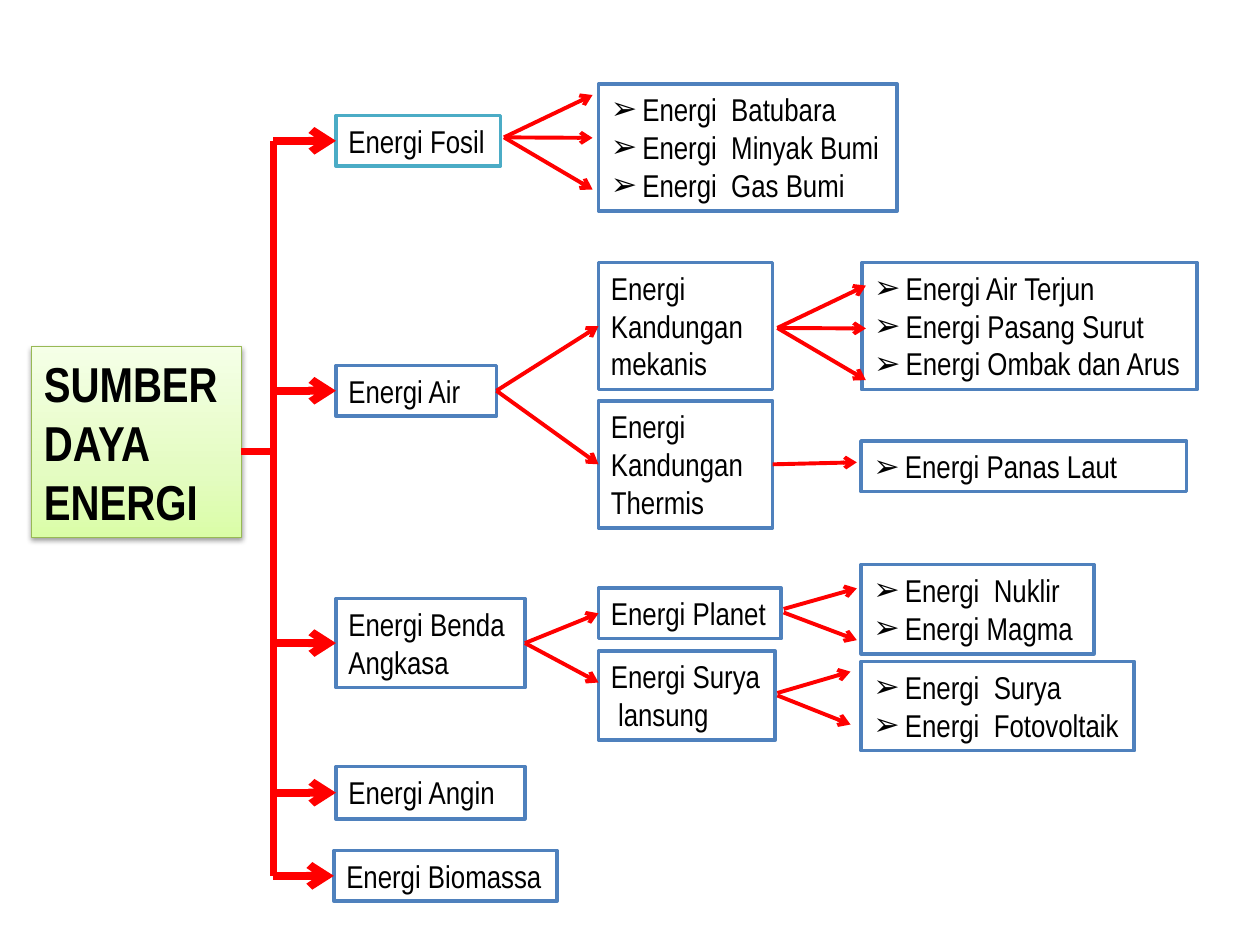
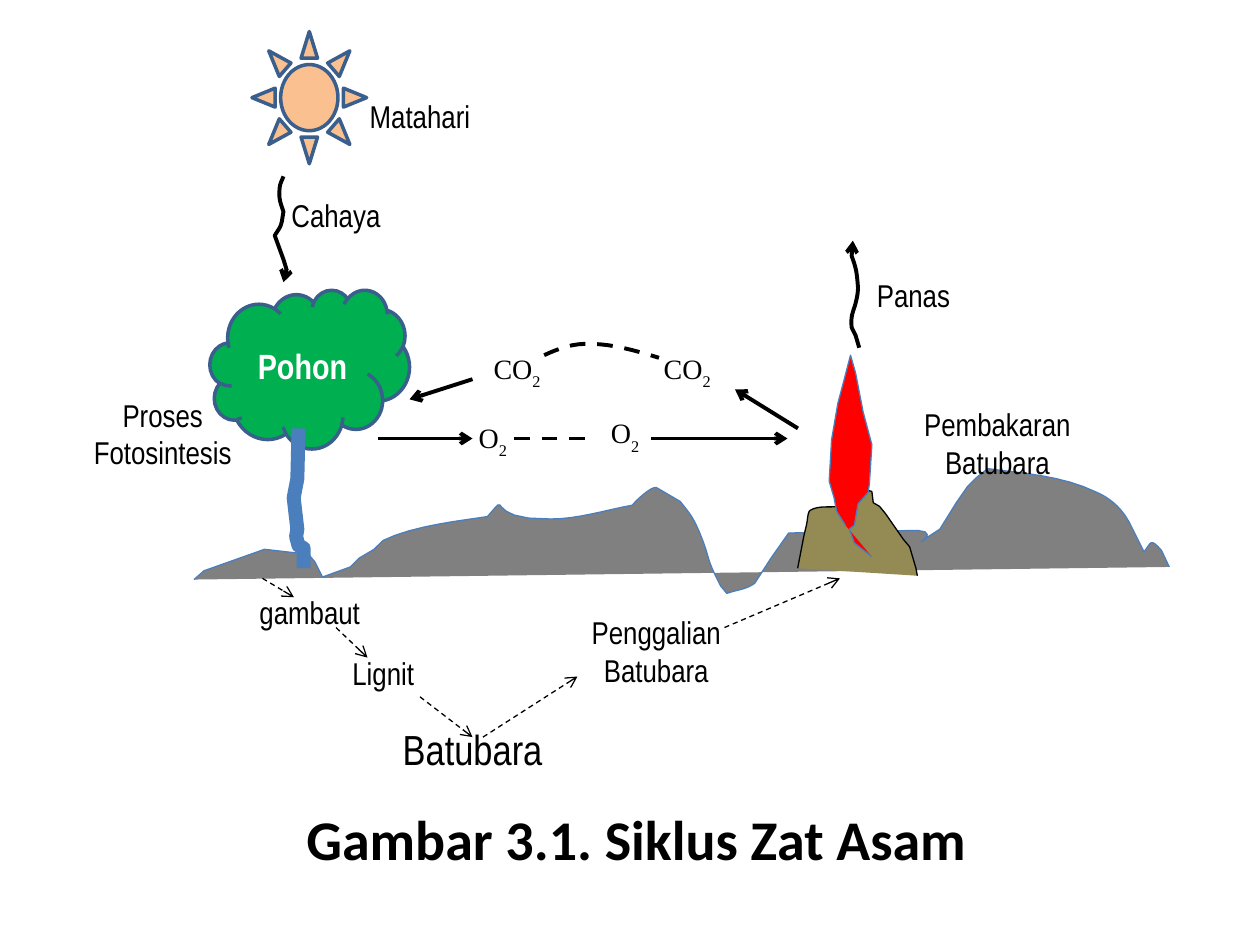
from copy import deepcopy
from lxml.etree import SubElement
from pptx import Presentation
from pptx.dml.color import RGBColor
from pptx.enum.dml import MSO_LINE
from pptx.enum.shapes import MSO_CONNECTOR, MSO_SHAPE
from pptx.enum.text import MSO_ANCHOR, MSO_AUTO_SIZE, PP_ALIGN
from pptx.oxml.ns import qn
from pptx.util import Pt

COLORS = {key: RGBColor.from_string(value) for key, value in {
    "black": "000000", "white": "FFFFFF", "red": "FF0000",
    "blue": "4F81BD", "teal": "4BACC6", "edge": "3A5F8C", "earth_edge": "4B7EBC",
    "root_edge": "98B955", "root_dark": "DAFDA7", "root_mid": "E4FCC2", "root_light": "F5FFE7",
    "sun": "FAC090", "leaf": "00B050", "ground": "808080", "pit": "948A54",
}.items()}
BODY = {"name": "Arial Narrow", "size": Pt(18)}
FORMULA = {"name": "Times New Roman", "size": Pt(16)}
BOX_FRAME = {"word_wrap": False, "auto_size": MSO_AUTO_SIZE.SHAPE_TO_FIT_TEXT,
             "vertical_anchor": MSO_ANCHOR.TOP}
LABEL_FRAME = BOX_FRAME | {"word_wrap": True}
MIDDLE_FRAME = LABEL_FRAME | {"vertical_anchor": MSO_ANCHOR.MIDDLE}
RIGHT, LEFT = 3, 1


def write(shape, lines, frame, font, color="black", align=PP_ALIGN.LEFT, bullet=False):
    """Fill a shape with one paragraph a line; what follows "_" is a subscript."""
    text_frame = shape.text_frame
    for key, value in frame.items():
        setattr(text_frame, key, value)
    for number, line in enumerate(lines):
        paragraph = text_frame.add_paragraph() if number else text_frame.paragraphs[0]
        paragraph.alignment = align
        if bullet:
            properties = paragraph._p.get_or_add_pPr()
            properties.set("marL", str(Pt(18)))
            properties.set("indent", str(-Pt(18)))
            SubElement(properties, qn("a:buFont"), typeface="Arial")
            SubElement(properties, qn("a:buChar"), char="➢")
        for level, part in enumerate(line.split("_")):
            run = paragraph.add_run()
            run.text = part
            for key, value in font.items():
                setattr(run.font, key, value)
            run.font.color.rgb = COLORS[color]
            if level:
                run.font._element.set("baseline", "-30000")


def stroke(shape, color, width, dash=False, arrow=False):
    """Set the outline and return the effect list, which is empty: no shadow."""
    shape.line.color.rgb = COLORS[color]
    shape.line.width = Pt(width)
    if dash:
        shape.line.dash_style = MSO_LINE.DASH
    properties = shape._element.spPr
    if arrow:
        SubElement(properties.find(qn("a:ln")), qn("a:tailEnd"), type="arrow")
    return SubElement(properties, qn("a:effectLst"))


prs = Presentation()
prs.slide_width, prs.slide_height = Pt(720), Pt(540)
blank = prs.slide_layouts[6]

# Slide 1: tree of energy sources
tree = prs.slides.add_slide(blank)

root = tree.shapes.add_shape(MSO_SHAPE.RECTANGLE, Pt(18), Pt(198), Pt(120), Pt(109))
root.fill.gradient()
root.fill.gradient_angle = 90
stops = root._element.spPr.find(qn("a:gradFill")).find(qn("a:gsLst"))
stops.insert(1, deepcopy(stops[0]))
for stop, (position, tint) in zip(root.fill.gradient_stops, (
        (0, "root_dark"), (0.35, "root_mid"), (1, "root_light"))):
    stop.position = position
    stop.color.rgb = COLORS[tint]
shadow = SubElement(stroke(root, "root_edge", 0.75), qn("a:outerShdw"), blurRad=str(Pt(3.1)),
                    dist=str(Pt(1.6)), dir="5400000", rotWithShape="0")
shade = SubElement(shadow, qn("a:srgbClr"), val="000000")
SubElement(shade, qn("a:alpha"), val="38000")
write(root, ["SUMBER", "DAYA", "ENERGI"], MIDDLE_FRAME,
      BODY | {"size": Pt(28), "bold": True})

# key: left, top, width, height, lines, bulleted
sources = {
    "fosil": (192, 66, 94, 29, ["Energi Fosil"], False),
    "air": (192, 208.8, 91.7, 29, ["Energi Air"], False),
    "angkasa": (192, 342, 108, 51, ["Energi Benda", "Angkasa"], False),
    "angin": (192, 438, 108, 30, ["Energi Angin"], False),
    "biomassa": (190.8, 486, 127.5, 29, ["Energi Biomassa"], False),
    "planet": (342, 336, 104.4, 29, ["Energi Planet"], False),
    "surya": (342, 372, 101, 51, ["Energi Surya", " lansung"], False),
    "mekanis": (342, 150, 99.5, 72.7, ["Energi", "Kandungan", "mekanis"], False),
    "thermis": (342, 229, 99.5, 72.7, ["Energi", "Kandungan", "Thermis"], False),
    "fosil_list": (342, 48, 170.6, 72.7,
                   ["Energi  Batubara", "Energi  Minyak Bumi", "Energi  Gas Bumi"], True),
    "mekanis_list": (492.5, 150, 191.5, 72.7,
                     ["Energi Air Terjun", "Energi Pasang Surut", "Energi Ombak dan Arus"], True),
    "thermis_list": (492, 252, 186, 29, ["Energi Panas Laut"], True),
    "planet_list": (492, 322.6, 133.2, 51, ["Energi  Nuklir", "Energi Magma"], True),
    "surya_list": (492, 378, 156.2, 51, ["Energi  Surya", "Energi  Fotovoltaik"], True),
}
boxes = {}
for key, (left, top, width, height, lines, bulleted) in sources.items():
    box = tree.shapes.add_shape(MSO_SHAPE.RECTANGLE, Pt(left), Pt(top), Pt(width), Pt(height))
    box.fill.solid()
    box.fill.fore_color.rgb = COLORS["white"]
    stroke(box, "teal" if key == "fosil" else "blue", 2)
    wraps = key in ("angkasa", "angin", "thermis_list")
    write(box, lines, LABEL_FRAME if wraps else BOX_FRAME, BODY, bullet=bulleted)
    boxes[key] = box

# x1, y1, x2, y2, box it leaves, box it reaches, width, arrowhead
spine = 156.3
main = ("fosil", "air", "angkasa", "angin", "biomassa")
middles = {key: sources[key][1] + sources[key][3] / 2 for key in main}
links = [(138, 258, spine, 258, None, None, 4.5, False),
         (spine, middles["fosil"], spine, middles["biomassa"], None, None, 4.5, False)]
links += [(spine, middles[key], 192, middles[key], None, key, 4.5, True) for key in main]
branches = [
    (283.7, 223, 342, 186, "air", "mekanis"),
    (283.7, 223, 342, 265, "air", "thermis"),
    (300, 366, 342, 348, "angkasa", "planet"),
    (300, 367, 342, 390, "angkasa", None),
    (441.5, 265, 489.6, 264.2, "thermis", None),
    (447.8, 348, 489.6, 336.2, None, None), (447.8, 350, 489.6, 365.8, None, None),
    (444.2, 396, 486, 383.8, None, None), (444.2, 397.4, 486, 414, None, None),
]
for x, y in ((288, 78.5), (444.2, 187.4)):
    branches += [(x, y, x + 50.6, y + rise, None, None) for rise in (-24.2, 0.3, 29.8)]
links += [branch + (2.25, True) for branch in branches]
for x1, y1, x2, y2, parent, child, width, arrow in links:
    link = tree.shapes.add_connector(MSO_CONNECTOR.STRAIGHT, Pt(x1), Pt(y1), Pt(x2), Pt(y2))
    if parent:
        link.begin_connect(boxes[parent], RIGHT)
    if child:
        link.end_connect(boxes[child], LEFT)
    stroke(link, "red", width, arrow=arrow)

# Slide 2: the oxygen cycle
cycle = prs.slides.add_slide(blank)

for preset, bounds, color in ((MSO_SHAPE.SUN, (144, 18, 65.5, 75.6), "sun"),
                              (MSO_SHAPE.CLOUD, (120, 165.6, 114, 90.7), "leaf")):
    figure = cycle.shapes.add_shape(preset, *map(Pt, bounds))
    figure.fill.solid()
    figure.fill.fore_color.rgb = COLORS[color]
    stroke(figure, "edge", 2)
crown = figure
write(crown, ["Pohon"], {"word_wrap": True, "vertical_anchor": MSO_ANCHOR.MIDDLE},
      BODY | {"size": Pt(20), "bold": True}, "white", PP_ALIGN.CENTER)

# Each path holds a start, then (x, y) for a line or six values for a Bezier curve
hills = [
    (110.9, 331.2), (116.6, 326.2), (151.2, 313.9), (176.4, 316.8), (180, 321.1),
    (184.3, 329.8), (200.2, 324), (205.2, 319), (213.8, 313.9), (218.9, 308.9),
    (236.2, 300.2, 265, 297.4, 278.6, 295.2), (293, 278.6, 274.3, 297.4, 314.6, 296.6),
    (330.5, 296.6, 345.6, 291.6, 361.4, 288.7), (363.6, 285.8, 372.2, 277.9, 375.1, 278.6),
    (388.8, 286.6), (393.1, 292.3, 395.3, 293.8, 399.6, 303.8),
    (406.8, 321.1, 402.5, 316.8, 411.8, 334.8), (415.4, 339.1),
    (421.2, 337, 426.2, 337, 431.3, 333.4), (440.6, 319), (450.7, 304.6), (524.2, 303.1),
    (541.4, 303.8, 511.9, 318.2, 537.1, 302.4), (546.5, 287.3), (553, 277.9),
    (560.2, 270.7, 556.6, 274.3, 564.5, 267.8), (584.6, 270.7, 606.2, 271.4, 627.1, 281.5),
    (632.2, 283.7, 640.1, 288.7, 645.1, 298.1), (653.8, 315.4),
    (658.1, 309.6, 657.4, 307.4, 663.8, 314.6), (668.2, 324),
]
pit = [
    (455.8, 324.7), (459.4, 306), (460.8, 300.2), (461.5, 297.4, 461.5, 292.3, 463, 291.6),
    (468, 288.7, 473.8, 290.2, 478.8, 289.4), (488.2, 283), (491.8, 279.4), (498.2, 280.8),
    (499, 287.3), (502.6, 289.4), (506.2, 293.8), (516.2, 308.2), (519.8, 312.5),
    (523.4, 324.7), (524.2, 329),
]
flame = [
    (483.1, 300.2), (478.1, 292.3), (476.6, 284.4), (473.8, 275), (475.2, 251.3),
    (478.8, 230.4), (481.7, 219.6), (486, 203), (488.9, 213.1), (493.2, 235.4),
    (498.2, 254.2), (496.8, 276.5), (496.1, 281.5), (490.3, 288), (488.2, 300.2),
    (485.3, 302.4), (488.2, 310.3), (498.2, 318.2),
]
sunlight = [
    (162, 100.8), (161.3, 103, 159.8, 105.1, 159.8, 108),
    (159.1, 113.8, 160.6, 116.6, 162, 121), (161.3, 124.6, 161.3, 127.4, 159.8, 130.3),
    (157, 134.6), (162, 148.3), (164.2, 155.5), (162, 161.3),
]
heat = [
    (491, 198.7), (488.9, 191.5), (486.7, 187.2), (486, 180.7, 487.4, 178.6, 488.9, 173.5),
    (489.6, 170.6, 490.3, 167.8, 490.3, 164.2), (489.6, 154.1, 488.9, 152.6, 486.7, 146.2),
    (487.4, 137.5),
]
trunk = [
    (170.6, 244.8), (169.9, 273.6), (167.8, 284.4), (169.9, 302.4), (169.2, 306.7),
    (170.6, 311.8), (173.5, 313.2), (173.5, 324.7),
]
gas_arc = [
    (311, 203), (319, 199.4, 327.6, 195.8, 338.4, 196.6),
    (349.2, 196.6, 362.9, 200.2, 376.6, 204.5),
]
# path, fill, line colour, line width, dashed, arrowhead
for path, fill, color, width, dash, arrow in (
        (hills, "ground", "earth_edge", 0.75, False, False),
        (pit, "pit", "black", 0.75, False, False),
        (flame, "red", "earth_edge", 0.75, False, False),
        (sunlight, None, "black", 2.25, False, True),
        (heat, None, "black", 2.25, False, True),
        (trunk, None, "earth_edge", 8, False, False),
        (gas_arc, None, "black", 2.25, True, False)):
    points = [path[0]]
    for step in path[1:]:
        if len(step) == 2:
            points.append(step)
            continue
        x0, y0 = points[-1]
        x1, y1, x2, y2, x3, y3 = step
        for t in (n / 8 for n in range(1, 9)):
            a, b, c, d = (1 - t) ** 3, 3 * t * (1 - t) ** 2, 3 * t * t * (1 - t), t ** 3
            points.append((a * x0 + b * x1 + c * x2 + d * x3, a * y0 + b * y1 + c * y2 + d * y3))
    places = [(Pt(x), Pt(y)) for x, y in points]
    builder = cycle.shapes.build_freeform(*places[0])
    builder.add_line_segments(places[1:], close=False)
    outline = builder.convert_to_shape()
    if fill:
        outline.fill.solid()
        outline.fill.fore_color.rgb = COLORS[fill]
    else:
        outline.fill.background()
    stroke(outline, color, width, dash, arrow)

# x1, y1, x2, y2, width, dashed, arrowhead
for x1, y1, x2, y2, width, dash, arrow in (
        (150, 330.5, 168, 341.3, 0.75, True, True),
        (192, 358.6, 210, 375.8, 0.75, True, True),
        (276, 421.2, 330, 386.6, 0.75, True, True),
        (240, 398.2, 270, 421.2, 0.75, True, True),
        (414, 358.6, 480, 330.5, 0.75, True, True),
        (216, 250.6, 270, 250.6, 2.25, False, True),
        (372, 250.6, 450, 250.6, 2.25, False, True),
        (293.8, 250.6, 336, 250.6, 2.25, True, False),
        (456, 244.8, 420, 222.5, 2.25, False, True),
        (270, 216.7, 234, 228.2, 2.25, False, True)):
    flow = cycle.shapes.add_connector(MSO_CONNECTOR.STRAIGHT, Pt(x1), Pt(y1), Pt(x2), Pt(y2))
    stroke(flow, "black", width, dash, arrow)

for left, top, width, height, *lines in (
        (204, 51.8, 72, 27.4, "Matahari"), (156, 108.7, 72, 27.4, "Cahaya"),
        (516, 228.2, 108, 48.2, "Pembakaran Batubara"), (486, 154, 72, 27.4, "Panas"),
        (132, 335.5, 90, 27.4, "gambaut"), (330, 347, 90, 48.2, "Penggalian Batubara"),
        (204, 409.7, 132, 34.6, "Batubara"), (174, 370, 90, 27.4, "Lignit"),
        (42, 222.5, 102, 48.2, "Proses", "Fotosintesis")):
    label = cycle.shapes.add_textbox(Pt(left), Pt(top), Pt(width), Pt(height))
    font = BODY | {"size": Pt(24)} if lines == ["Batubara"] else BODY
    write(label, lines, LABEL_FRAME, font, align=PP_ALIGN.CENTER)

for left, top, formula in ((275, 199.4, "CO_2"), (372.2, 199.4, "CO_2"),
                           (342, 236.2, "O_2"), (266.4, 239, "O_2")):
    gas = cycle.shapes.add_textbox(Pt(left), Pt(top), Pt(48), Pt(25.2))
    write(gas, [formula], MIDDLE_FRAME, FORMULA)

caption = cycle.shapes.add_textbox(Pt(168), Pt(456), Pt(394.6), Pt(46))
write(caption, ["Gambar 3.1. Siklus Zat Asam"], BOX_FRAME,
      {"name": "Calibri", "size": Pt(32), "bold": True})

prs.save("out.pptx")
